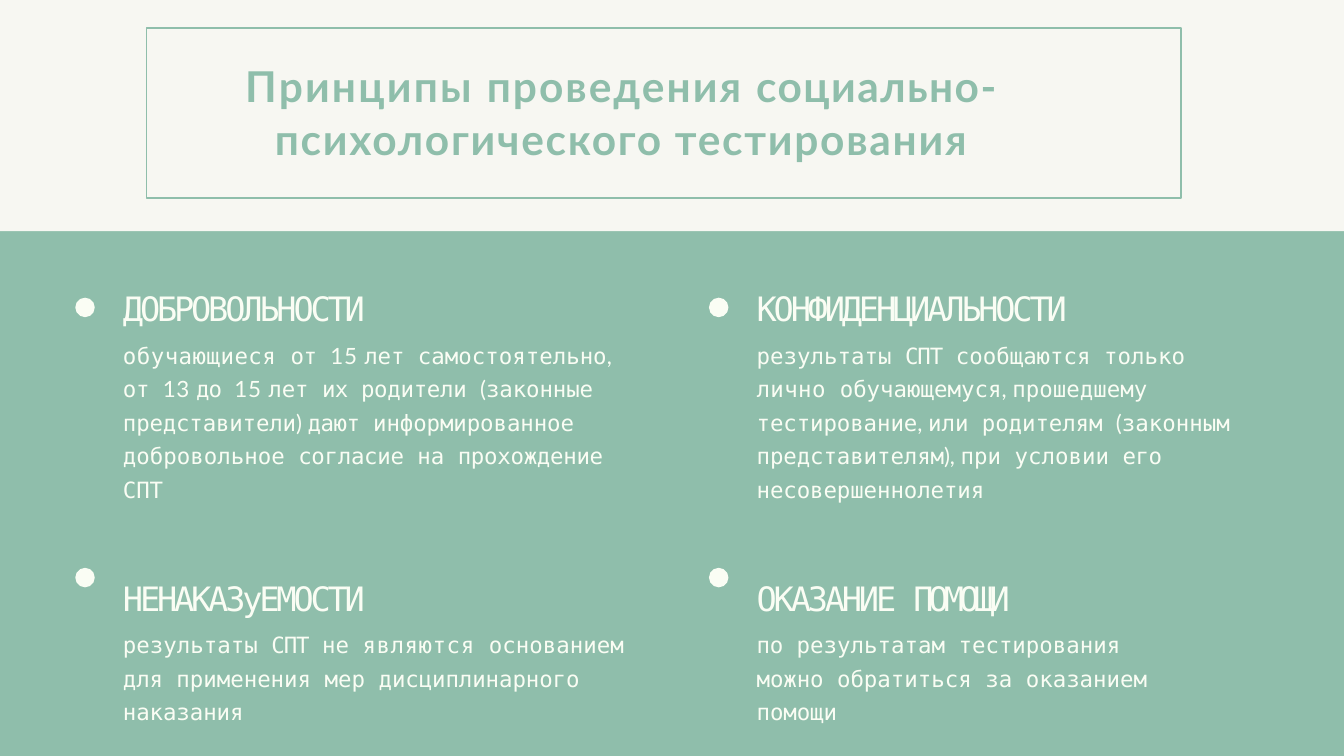
from pptx import Presentation
from pptx.dml.color import RGBColor
from pptx.enum.shapes import MSO_SHAPE as Shape
from pptx.enum.text import MSO_ANCHOR as Anchor, PP_ALIGN as Align
from pptx.util import Inches, Pt

GREEN = RGBColor(0x8F, 0xBE, 0xAB)
CREAM = RGBColor(0xF7, 0xF7, 0xF2)
IVORY = RGBColor(0xFA, 0xFD, 0xF4)
SANS, MONO = "Lato", "DejaVu Sans Mono"
WIDTH, HEIGHT = 20, 11.25
HEADER = 3.44
DOT = 0.29

# Runs are (text, letter spacing in points)
TITLE = [("Принципы ", 2.4), ("проведения ", 2.2), ("социально- ", 1.6),
         ("психологического тестирования", 1.9)]

# Each column holds principles as (heading runs, body runs, right margin)
LEFT_COLUMN = [
    ([("ДОБРОВОЛЬНОСТИ", -3.4)],
     [("обучающиеся ", 0.5), ("от ", -0.3), ("15 ", 0.8), ("лет ", -0.1),
      ("самостоятельно", 0), (", ", 0), ("от ", -0.3), ("13 ", 0.6),
      ("до ", -1.2), ("15 ", 0.8), ("лет ", -0.1), ("их ", -0.8),
      ("родители ", -0.3), ("(", -0.1), ("законные ", -0.1),
      ("представители", -0.2), (") ", -0.2), ("дают ", -0.5),
      ("информированное ", -0.1), ("добровольное ", 0), ("согласие ", -0.3),
      ("на ", 0), ("прохождение ", -0.3), ("СПТ", -0.2)], 0),
    ([("НЕНАКАЗуЕМОСТИ", -3.4)],
     [("результаты ", 0), ("СПТ ", -1.1), ("не ", 0), ("являются ", 0.6),
      ("основанием ", 0), ("для ", -0.2), ("применения мер ", 0),
      ("дисциплинарного наказания", -0.1)], 0),
]
RIGHT_COLUMN = [
    ([("КОНФИДЕНЦИАЛЬНОСТИ", -3.4)],
     [("результаты ", 0), ("СПТ ", -1.1), ("сообщаются только ", 0),
      ("лично ", 0.4), ("обучающемуся", 0), (", ", 0), ("прошедшему ", 0),
      ("тестирование", -0.1), (", ", -0.1), ("или ", 0), ("родителям ", -0.1),
      ("(", 0), ("законным ", 0), ("представителям", -0.1), ("), ", -0.1),
      ("при условии ", 0), ("его ", -0.5), ("несовершеннолетия", -0.1)], 0),
    ([("ОКАЗАНИЕ ", -3.4), ("ПОМОЩИ", -5.3)],
     [("по ", -0.2), ("результатам тестирования ", 0), ("можно ", -0.1),
      ("обратиться за оказанием ", 0), ("помощи", -0.1)], 1),
]


def add_block(slide, kind, box, fill):
    block = slide.shapes.add_shape(kind, *map(Inches, box))
    block.shadow.inherit = False
    block.fill.solid()
    block.fill.fore_color.rgb = fill
    block.line.fill.background()
    return block


def set_frame(frame, top_inset):
    frame.word_wrap = True
    frame.vertical_anchor = Anchor.TOP
    frame.margin_left = frame.margin_right = frame.margin_bottom = 0
    frame.margin_top = Inches(top_inset)


def add_runs(paragraph, runs, size, color, bold=False, font=None):
    """Digits and punctuation take the sans font unless one font is given."""
    for text, spacing in runs:
        run = paragraph.add_run()
        run.text = text
        has_letters = any(char.isalpha() for char in text)
        run.font.name = font or (MONO if has_letters else SANS)
        run.font.size = Pt(size)
        run.font.bold = bold
        run.font.color.rgb = color
        run.font._element.set("spc", str(round(spacing * 100)))


def add_header(slide, box):
    left, top, width, height = box
    add_block(slide, Shape.RECTANGLE, box, CREAM)
    title_box = (left + 0.109 * width, top + 0.122 * height,
                 0.77 * width, 0.735 * height)
    title = add_block(slide, Shape.RECTANGLE, title_box, CREAM)
    title.line.color.rgb = GREEN
    title.line.width = Pt(1.95)
    set_frame(title.text_frame, 0.43)
    paragraph = title.text_frame.paragraphs[0]
    paragraph.alignment = Align.LEFT
    paragraph.line_spacing = 1.05
    # Hanging first line
    margins = paragraph._p.get_or_add_pPr()
    margins.set("marL", str(Inches(1.91)))
    margins.set("indent", str(Inches(-0.44)))
    add_runs(paragraph, TITLE, 45.5, GREEN, True, SANS)


def add_column(slide, box, principles):
    left, top, width, height = box
    # Bullet dots
    for row in range(len(principles)):
        dot_box = (left, top + 0.44 + row * 4.02, DOT, DOT)
        add_block(slide, Shape.OVAL, dot_box, IVORY)

    # Headings and explanations
    text_box = (left + 0.7, top, width - 0.7, height)
    frame = slide.shapes.add_textbox(*map(Inches, text_box)).text_frame
    set_frame(frame, 0.3)
    for row, (heading_runs, body_runs, right_margin) in enumerate(principles):
        heading = frame.add_paragraph() if row else frame.paragraphs[0]
        heading.space_before = Pt(80 if row else 0)
        add_runs(heading, heading_runs, 36, IVORY)
        body = frame.add_paragraph()
        body.space_before = Pt(6.8)
        body.line_spacing = 1.25
        body._p.get_or_add_pPr().set("marR", str(Inches(right_margin)))
        add_runs(body, body_runs, 24, IVORY)
        for paragraph in (heading, body):
            paragraph.alignment = Align.LEFT
            paragraph._p.get_or_add_pPr().set("marL", str(Inches(0.01)))


def main():
    deck = Presentation()
    deck.slide_width, deck.slide_height = Inches(WIDTH), Inches(HEIGHT)
    slide = deck.slides.add_slide(deck.slide_layouts[6])
    add_block(slide, Shape.RECTANGLE, (0, 0, WIDTH, HEIGHT), GREEN)
    add_header(slide, (0, 0, WIDTH, HEADER))
    for index, principles in enumerate((LEFT_COLUMN, RIGHT_COLUMN)):
        column_box = (1.12 + index * 9.43, 3.99, 8.25, 6.53)
        add_column(slide, column_box, principles)
    deck.save("out.pptx")


if __name__ == "__main__":
    main()
